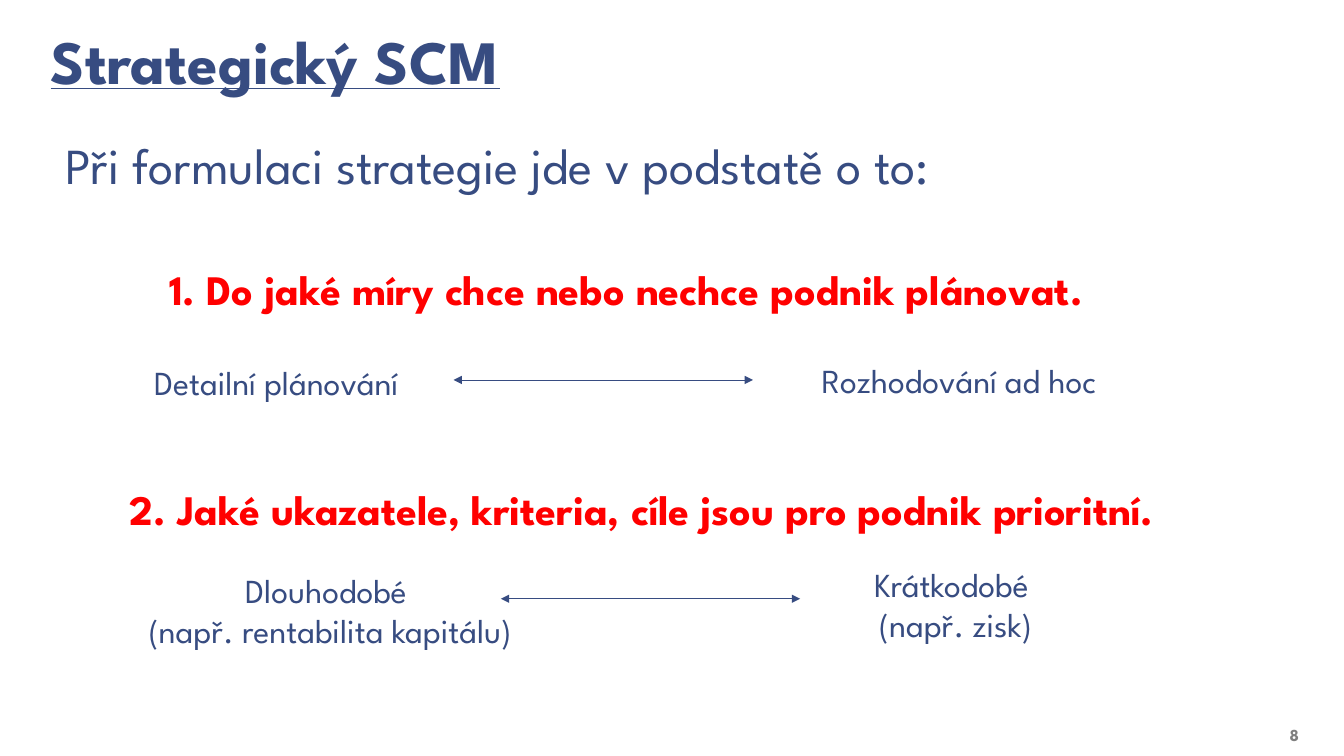
from pptx import Presentation
from pptx.dml.color import RGBColor
from pptx.enum.shapes import MSO_CONNECTOR
from pptx.enum.text import MSO_ANCHOR, MSO_AUTO_SIZE, PP_ALIGN
from pptx.oxml.ns import qn
from pptx.util import Pt
from lxml import etree

LEFT, CENTER, RIGHT = PP_ALIGN.LEFT, PP_ALIGN.CENTER, PP_ALIGN.RIGHT
BOTTOM = MSO_ANCHOR.BOTTOM
NO_FIT, GROW = MSO_AUTO_SIZE.NONE, MSO_AUTO_SIZE.SHAPE_TO_FIT_TEXT
STRAIGHT = MSO_CONNECTOR.STRAIGHT

FONT = "League Spartan"
COLORS = {"navy": "374C81", "red": "FF0000", "gray": "7F7F7F", "white": "FFFFFF"}

# Content: places are (left, top, width, height) in points
TITLE = "Strategický SCM"
TITLE_PLACE = (26.6, -36, 800, 110.2)
PAGE_NUMBER = "8"
NUMBER_PLACE = (850.3, 511.9, 87.1, 25.2)

# Text styles: size, colour, bold, alignment
STYLES = {
    "intro": (36, "navy", False, LEFT),
    "question": (30, "red", True, CENTER),
    "pole": (24, "navy", False, CENTER),
}
BOXES = [
    ("intro", (39.6, 92.2, 780.5, 51.1),
     ["Při formulaci strategie jde v podstatě o to:"]),
    ("question", (54.7, 185, 793.4, 43.9),
     ["1. Do jaké míry chce nebo nechce podnik plánovat. "]),
    ("pole", (77, 254.9, 240.5, 36), ["Detailní plánování"]),
    ("pole", (543.6, 253.4, 283, 36), ["Rozhodování ad hoc"]),
    ("question", (35.4, 342, 854.6, 43.9),
     ["2. Jaké ukazatele, kriteria, cíle jsou pro podnik prioritní. "]),
    ("pole", (591.8, 398.9, 181.4, 65.5), ["Krátkodobé ", "(např. zisk)"]),
    ("pole", (72, 403.2, 327.6, 65.5),
     ["Dlouhodobé ", "(např. rentabilita kapitálu)"]),
]

# Double arrows of equal length: left end and height
ARROW_LENGTH = 213.8
ARROWS = [(324, 271.4), (357.8, 427.7)]


def color(name):
    return RGBColor.from_string(COLORS[name])


def place(shape, area):
    shape.left, shape.top, shape.width, shape.height = map(Pt, area)


def write(para, text, size, color_name, bold, align):
    para.alignment = align
    span = para.add_run()
    span.text = text
    span.font.name = FONT
    span.font.size = Pt(size)
    span.font.bold = bold
    span.font.color.rgb = color(color_name)
    return span


def set_bottom_frame(frame):
    frame.word_wrap = True
    frame.auto_size = NO_FIT
    frame.vertical_anchor = BOTTOM
    frame.margin_left = frame.margin_right = Pt(9.6)
    frame.margin_top = frame.margin_bottom = Pt(4.8)


def add_text_box(page, style, area, lines):
    box = page.shapes.add_textbox(*map(Pt, area))
    box.fill.solid()
    box.fill.fore_color.rgb = color("white")
    frame = box.text_frame
    frame.word_wrap = True
    frame.auto_size = GROW
    for index, line in enumerate(lines):
        para = frame.add_paragraph() if index else frame.paragraphs[0]
        write(para, line, *STYLES[style])


def add_double_arrow(page, left, height):
    arrow = page.shapes.add_connector(
        STRAIGHT, Pt(left), Pt(height), Pt(left + ARROW_LENGTH), Pt(height))
    arrow.line.color.rgb = color("navy")
    arrow.line.width = Pt(0.5)
    outline = arrow.line._get_or_add_ln()
    for end in ("a:headEnd", "a:tailEnd"):
        etree.SubElement(outline, qn(end), type="triangle")
    etree.SubElement(arrow._element.spPr, qn("a:effectLst"))


def main():
    deck = Presentation()
    deck.slide_width, deck.slide_height = Pt(960), Pt(540)
    page = deck.slides.add_slide(deck.slide_layouts[5])

    # Title
    title = page.shapes.title
    place(title, TITLE_PLACE)
    set_bottom_frame(title.text_frame)
    para = title.text_frame.paragraphs[0]
    para.line_spacing = 0.85
    write(para, TITLE, 44, "navy", True, LEFT).font.underline = True

    # Page number
    number = page.shapes.add_textbox(*map(Pt, NUMBER_PLACE))
    set_bottom_frame(number.text_frame)
    write(number.text_frame.paragraphs[0], PAGE_NUMBER, 12, "gray", True, RIGHT)

    # Questions and their opposite poles
    for style, area, lines in BOXES:
        add_text_box(page, style, area, lines)
    for left, height in ARROWS:
        add_double_arrow(page, left, height)

    deck.save("out.pptx")


if __name__ == "__main__":
    main()
